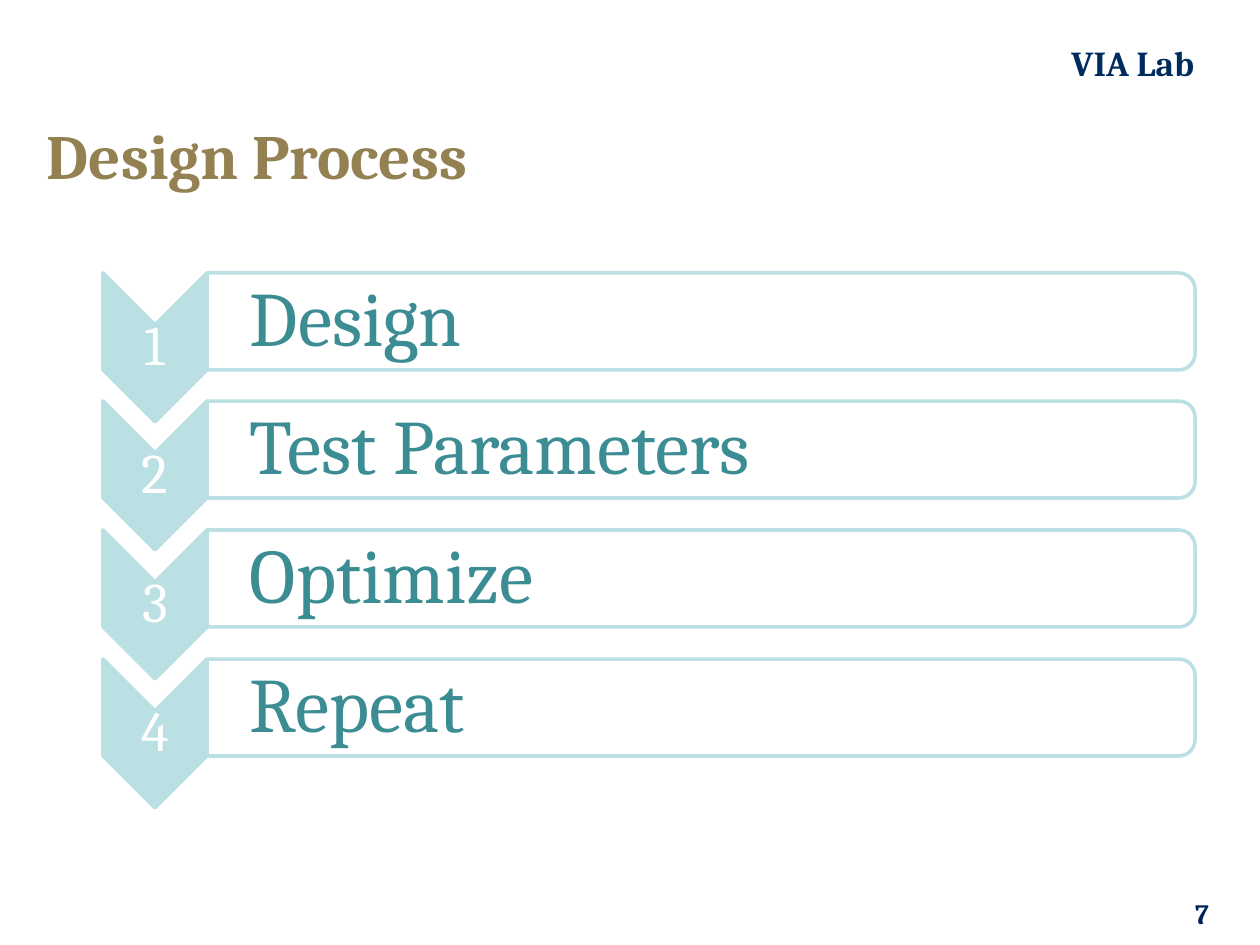
from lxml import etree
from pptx import Presentation
from pptx.dml.color import RGBColor
from pptx.enum.shapes import MSO_SHAPE as Shape
from pptx.enum.text import MSO_ANCHOR as Anchor, PP_ALIGN as Align
from pptx.oxml.ns import qn
from pptx.util import Emu, Pt

PX = 914400 / 126
STEPS = ["Design", "Test Parameters", "Optimize", "Repeat"]
FIRST_TOP = 273
THREE_ROWS = 386


def px(length):
    return Emu(round(length * PX))


def color(value):
    return RGBColor.from_string(value)


def write(frame, text, size=20, ink="000000", font="Cambria", bold=False,
          align=Align.LEFT, anchor=Anchor.MIDDLE, spacing=None, insets=(13, 6, 13, 6)):
    frame.word_wrap = True
    frame.vertical_anchor = anchor
    frame.margin_left, frame.margin_top, frame.margin_right, frame.margin_bottom = map(px, insets)
    paragraph = frame.paragraphs[0]
    paragraph.alignment = align
    if spacing:
        paragraph.line_spacing = spacing
    run = paragraph.add_run()
    run.text = text
    run.font.name = font
    run.font.size = Pt(size)
    run.font.bold = bold
    run.font.color.rgb = color(ink)


class Deck:
    navy, page_navy, gold = "002B5E", "00225A", "948151"
    pale, teal, white = "BBE0E3", "3C8C93", "FFFFFF"

    def __init__(self, presentation):
        self.slide = presentation.slides.add_slide(presentation.slide_layouts[6])

    def text(self, left, top, width, height, text, **style):
        box = self.slide.shapes.add_textbox(px(left), px(top), px(width), px(height))
        write(box.text_frame, text, **style)

    def turned_shape(self, kind, left, top, width, height, fill, opacity=100):
        shift = (width - height) / 2
        shape = self.slide.shapes.add_shape(
            kind, px(left + shift), px(top - shift), px(height), px(width))
        shape.rotation = 90
        shape.shadow.inherit = False
        shape.fill.solid()
        shape.fill.fore_color.rgb = color(fill)
        shape.line.color.rgb = color(self.pale)
        shape.line.width = Pt(2)
        if opacity < 100:
            solid = shape.fill._xPr.find(qn("a:solidFill"))
            etree.SubElement(solid[0], qn("a:alpha"), val=str(opacity * 1000))

    def step(self, top, number, label):
        self.turned_shape(Shape.CHEVRON, 103, top, 104, 149, self.pale)
        self.text(103, top + 52, 104, 45, str(number), size=32, ink=self.white,
                  align=Align.CENTER, spacing=0.9, insets=(3, 3, 3, 3))
        self.turned_shape(Shape.ROUND_2_SAME_RECTANGLE, 207, top, 988, 97, self.white, 90)
        self.text(207, top + 5, 983, 87, label, size=44, ink=self.teal,
                  spacing=0.9, insets=(43, 4, 4, 4))


def main():
    presentation = Presentation()
    presentation.slide_width = px(1260)
    presentation.slide_height = px(945)
    deck = Deck(presentation)
    deck.text(528, 35, 679, 55, "VIA Lab", size=20, ink=deck.navy, bold=True,
              align=Align.RIGHT, anchor=Anchor.TOP)
    deck.text(34, 113, 1191, 83, "Design Process", size=36, ink=deck.gold, bold=True)
    for index, label in enumerate(STEPS):
        deck.step(FIRST_TOP + THREE_ROWS * index // 3, index + 1, label)
    deck.text(1144, 882, 116, 63, "7", size=16, ink=deck.page_navy, bold=True,
              align=Align.CENTER)
    presentation.save("out.pptx")


if __name__ == "__main__":
    main()
